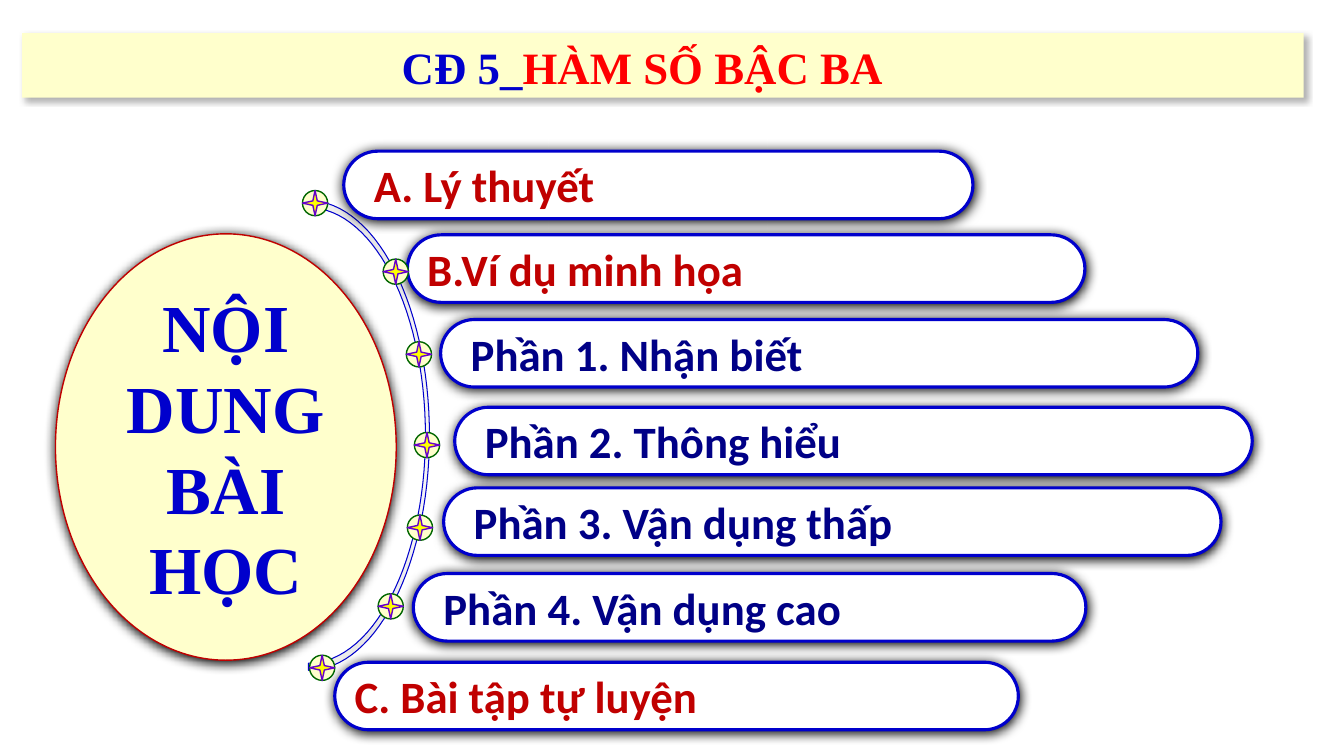
import copy
import math
from pptx import Presentation
from pptx.dml.color import RGBColor
from pptx.enum import shapes, text
from pptx.oxml import parse_xml
from pptx.oxml.ns import nsdecls, qn
from pptx.util import Inches, Pt

KINDS = shapes.MSO_SHAPE
BLUE, RED, NAVY, CREAM = "0000CC", "C00000", "000086", "FFFFCC"


def add_box(parent, kind, place, fill, line=None, width=1, shadow=None):
    """Add a preset shape; shadow is (opacity %, blur pt, distance pt, angle)."""
    box = parent.shapes.add_shape(kind, *map(Inches, place))
    box.fill.solid()
    box.fill.fore_color.rgb = RGBColor.from_string(fill)
    if line:
        box.line.color.rgb = RGBColor.from_string(line)
        box.line.width = Pt(width)
    else:
        box.line.fill.background()
    box.shadow.inherit = False
    if shadow:
        opacity, blur, distance, angle = shadow
        box._element.spPr.find(qn("a:effectLst")).append(parse_xml(
            f'<a:outerShdw {nsdecls("a")} blurRad="{Pt(blur)}" dist="{Pt(distance)}" '
            f'dir="{angle * 60000}" algn="ctr" rotWithShape="0"><a:srgbClr val="000000">'
            f'<a:alpha val="{opacity * 1000}"/></a:srgbClr></a:outerShdw>'))
    return box


def write(box, spans, font, size, align, anchor):
    """Fill a box with one bold paragraph of (wording, colour) spans."""
    frame = box.text_frame
    frame.word_wrap = True
    frame.vertical_anchor = anchor
    para = frame.paragraphs[0]
    para.alignment = align
    for wording, color in spans:
        span = para.add_run()
        span.text = wording
        span.font.name = font
        span.font.size = Pt(size)
        span.font.bold = True
        span.font.color.rgb = RGBColor.from_string(color)


deck = Presentation()
deck.slide_width, deck.slide_height = Inches(13.33), Inches(7.5)
page = deck.slides.add_slide(deck.slide_layouts[6])
LEFT, CENTER = text.PP_ALIGN.LEFT, text.PP_ALIGN.CENTER
TOP, MIDDLE = text.MSO_ANCHOR.TOP, text.MSO_ANCHOR.MIDDLE
DEEP_SHADOW = (100, 8.5, 1, 90)

# Title band
add_box(page, KINDS.RECTANGLE, (0.22, 0.33, 12.71, 0.64), CREAM, shadow=(30, 4.5, 2.6, 53))
title = page.shapes.add_textbox(Inches(0.33), Inches(0.34), Inches(12.08), Inches(0.64))
write(title, [("CĐ 5_", BLUE), ("HÀM SỐ BẬC BA", "FF0000")],
      "Times New Roman", 32, CENTER, TOP)

# Thin crescent: outer half ellipse down, inner half ellipse back up
angles = [math.radians(degree) for degree in range(-90, 91, 3)]
outer = [(3.06 + 1.2 * math.cos(a), 4.32 + 2.33 * math.sin(a)) for a in angles]
inner = [(3.06 + 1.16 * math.cos(a), 4.32 + 2.26 * math.sin(a)) for a in reversed(angles)]
outline = [(Inches(x), Inches(y)) for x, y in outer + inner]
builder = page.shapes.build_freeform(*outline[0])
builder.add_line_segments(outline[1:], close=True)
arc = builder.convert_to_shape()
arc.shadow.inherit = False
arc.line.color.rgb = RGBColor.from_string(BLUE)
arc.line.width = Pt(0.75)
arc.fill.gradient()
arc.fill.gradient_angle = 0
for stop, position, color in zip(arc.fill.gradient_stops, (0, 0.5), ("F4F4F4", "E7E6E6")):
    stop.position = position
    stop.color.rgb = RGBColor.from_string(color)
stop_list = next(arc._element.spPr.iter(qn("a:gsLst")))
last_stop = copy.deepcopy(stop_list[0])
last_stop.set("pos", "100000")
stop_list.append(last_stop)

# Topic bars: left, top, width, left inset, wording, colour
topics = [
    (3.41, 1.5, 6.24, 0.2, "A. Lý thuyết", RED),
    (4.04, 2.33, 6.72, 0.1, "B.Ví dụ minh họa", RED),
    (4.37, 3.17, 7.51, 0.2, "Phần 1. Nhận biết", NAVY),
    (4.51, 4.04, 7.91, 0.2, "Phần 2. Thông hiểu", NAVY),
    (4.4, 4.84, 7.71, 0.2, "Phần 3. Vận dụng thấp", NAVY),
    (4.1, 5.69, 6.67, 0.2, "Phần 4. Vận dụng cao", NAVY),
    (3.32, 6.57, 6.78, 0.1, "C. Bài tập tự luyện", RED),
]
for left, top, width, inset, wording, color in topics:
    bar = add_box(page, KINDS.ROUNDED_RECTANGLE, (left, top, width, 0.67),
                  "FFFFFF", BLUE, 2.25, DEEP_SHADOW)
    bar.adjustments[0] = 0.5
    bar.text_frame.margin_left = Inches(inset)
    write(bar, [(wording, color)], "Calibri", 32, LEFT, MIDDLE)

# Central oval
oval = add_box(page, KINDS.OVAL, (0.55, 2.32, 3.38, 4.23), CREAM, RED, 1, DEEP_SHADOW)
write(oval, [("NỘI DUNG BÀI HỌC", BLUE)], "Times New Roman", 48, CENTER, MIDDLE)

# Star pins along the crescent
pins = [(3, 1.89), (3.8, 2.57), (4.03, 3.39), (4.11, 4.29),
        (4.04, 5.11), (3.75, 5.89), (3.07, 6.5)]
for left, top in pins:
    pin = page.shapes.add_group_shape()
    place = (left, top, 0.25, 0.25)
    add_box(pin, KINDS.OVAL, place, CREAM, "006600")
    add_box(pin, KINDS.STAR_4_POINT, place, "FFFF00", "6600CC")

deck.save("out.pptx")
